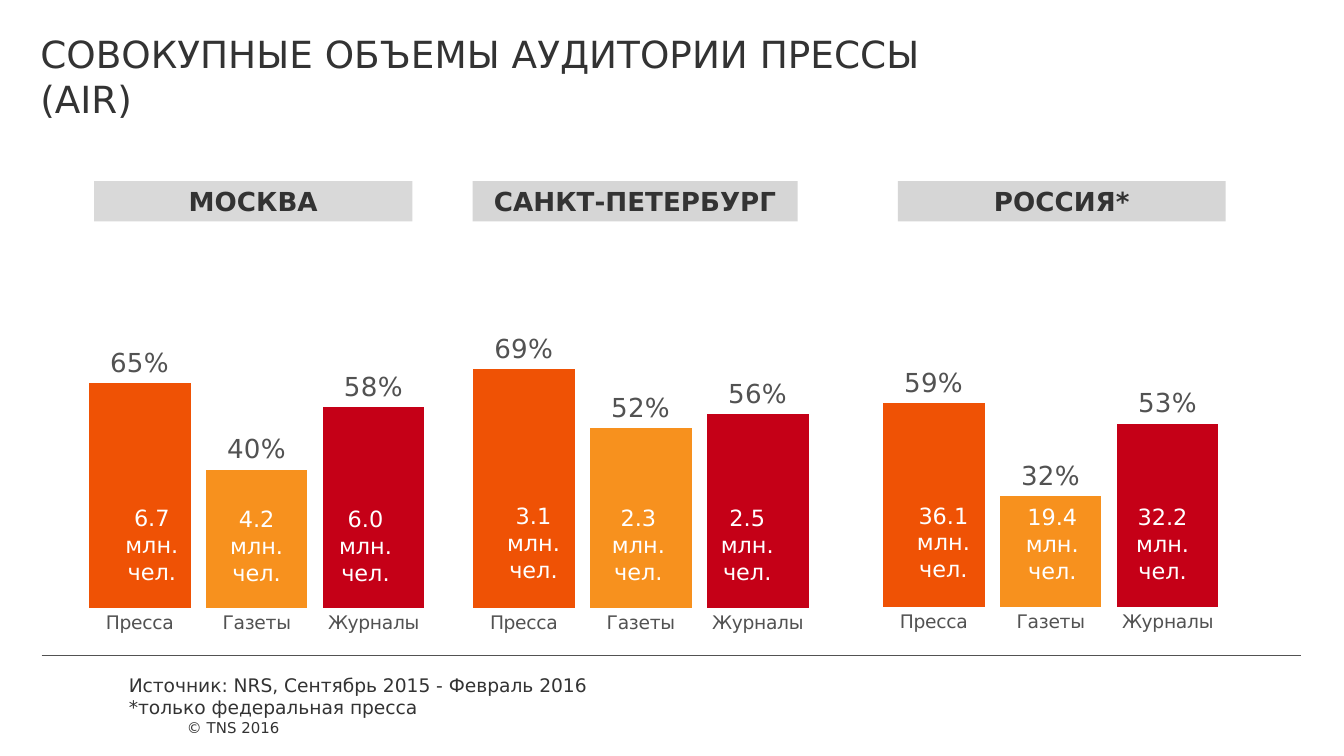
from dataclasses import dataclass

from lxml import etree
from pptx import Presentation
from pptx.chart.data import CategoryChartData
from pptx.dml.color import RGBColor
from pptx.enum.chart import XL_CHART_TYPE, XL_LABEL_POSITION, XL_TICK_LABEL_POSITION, XL_TICK_MARK
from pptx.enum.shapes import MSO_CONNECTOR, MSO_SHAPE
from pptx.enum.text import MSO_ANCHOR, PP_ALIGN
from pptx.oxml.ns import qn
from pptx.util import Pt

COLUMN = XL_CHART_TYPE.COLUMN_CLUSTERED
OUTSIDE_END = XL_LABEL_POSITION.OUTSIDE_END
NO_TICK = XL_TICK_MARK.NONE
NO_TICK_LABELS = XL_TICK_LABEL_POSITION.NONE
STRAIGHT = MSO_CONNECTOR.STRAIGHT
RECTANGLE = MSO_SHAPE.RECTANGLE
TOP, MIDDLE, BOTTOM = MSO_ANCHOR.TOP, MSO_ANCHOR.MIDDLE, MSO_ANCHOR.BOTTOM
LEFT, CENTER = PP_ALIGN.LEFT, PP_ALIGN.CENTER

FONT = "DejaVu Sans"
DARK, GREY, WHITE = "333333", "525252", "FFFFFF"
CATEGORIES = ("Пресса", "Газеты", "Журналы")
BAR_COLOURS = ("EF5205", "F7911E", "C50017")
DEFAULT_INSETS = (7.2, 3.6, 7.2, 3.6)


@dataclass
class Region:
    name: str
    header: tuple  # left, width, fill
    chart: tuple  # left, top
    overlap: int
    shares: tuple
    audiences: tuple
    label_lefts: tuple
    label_top: float


REGIONS = (
    Region("МОСКВА", (50.4, 170.6, "D9D9D9"), (39.6, 136.5), -57,
           (0.65, 0.4, 0.58), ("6.7", "4.2", "6.0"), (54.7, 110.9, 169.2), 266.4),
    Region("САНКТ-ПЕТЕРБУРГ", (253.2, 174.2, "D6D6D6"), (245.4, 136.5), -81,
           (0.69, 0.52, 0.56), ("3.1", "2.3", "2.5"), (259.2, 315.4, 373.7), 265.7),
    Region("РОССИЯ*", (481, 175.7, "D6D6D6"), (465, 135.9), -47,
           (0.59, 0.32, 0.53), ("36.1", "19.4", "32.2"), (478.8, 537.1, 596.2), 265.2),
)


def colour(hex_string):
    return RGBColor.from_string(hex_string)


def style_font(font, size, hex_string, bold=False):
    font.name = FONT
    font.size = Pt(size)
    font.bold = bold
    font.color.rgb = colour(hex_string)


def fill_text(shape, paragraphs, size, hex_string, align=LEFT, anchor=TOP,
              insets=DEFAULT_INSETS, bold=False, wrap=True):
    """Write each text as a paragraph; a newline inside it is a line break."""
    frame = shape.text_frame
    frame.word_wrap = wrap
    frame.vertical_anchor = anchor
    (frame.margin_left, frame.margin_top,
     frame.margin_right, frame.margin_bottom) = map(Pt, insets)
    for index, text in enumerate(paragraphs):
        paragraph = frame.add_paragraph() if index else frame.paragraphs[0]
        paragraph.alignment = align
        for line_index, line in enumerate(text.split("\n")):
            if line_index:
                paragraph.add_line_break()
            run = paragraph.add_run()
            run.text = line
            style_font(run.font, size, hex_string, bold)


def add_text(slide, box, paragraphs, size, hex_string, **options):
    shape = slide.shapes.add_textbox(*map(Pt, box))
    fill_text(shape, paragraphs, size, hex_string, **options)


def add_header(slide, name, left, width, fill):
    shape = slide.shapes.add_shape(RECTANGLE, Pt(left), Pt(97), Pt(width), Pt(21.6))
    shape.shadow.inherit = False
    shape.fill.solid()
    shape.fill.fore_color.rgb = colour(fill)
    shape.line.fill.background()
    fill_text(shape, [name], 14, DARK, align=CENTER, anchor=MIDDLE,
              insets=(2.2,) * 4, bold=True)


def add_rule(slide, left, right, top):
    connector = slide.shapes.add_connector(STRAIGHT, Pt(left), Pt(top), Pt(right), Pt(top))
    connector.line.color.rgb = colour(GREY)
    connector.line.width = Pt(0.75)
    etree.SubElement(connector._element.spPr, qn("a:effectLst"))


def add_column_chart(slide, left, top, shares, overlap):
    data = CategoryChartData(number_format="0%")
    data.categories = CATEGORIES
    data.add_series("Series 1", shares)
    chart = slide.shapes.add_chart(
        COLUMN, Pt(left), Pt(top), Pt(195.8), Pt(207.4), data).chart
    chart.has_legend = False
    chart.has_title = False
    style_font(chart.font, 16, GREY)

    # Axes
    category_axis = chart.category_axis
    category_axis.major_tick_mark = NO_TICK
    category_axis.format.line.fill.background()
    style_font(category_axis.tick_labels.font, 10, GREY)
    value_axis = chart.value_axis
    value_axis.minimum_scale = 0
    value_axis.maximum_scale = 1
    value_axis.has_major_gridlines = False
    value_axis.tick_label_position = NO_TICK_LABELS
    value_axis.visible = False

    # Columns and their shares
    plot = chart.plots[0]
    plot.vary_by_categories = False
    plot.gap_width = 15
    plot.overlap = overlap
    series = plot.series[0]
    for index, hex_string in enumerate(BAR_COLOURS):
        fill = series.points[index].format.fill
        fill.solid()
        fill.fore_color.rgb = colour(hex_string)
    labels = series.data_labels
    labels.show_value = True
    labels.number_format = "0%"
    labels.number_format_is_linked = False
    labels.position = OUTSIDE_END
    style_font(labels.font, 14, GREY)


def add_region(slide, region):
    add_header(slide, region.name, *region.header)
    add_column_chart(slide, *region.chart, region.shares, region.overlap)
    for index, (left, audience) in enumerate(zip(region.label_lefts, region.audiences)):
        top = region.label_top + (0.7 if index else 0)
        add_text(slide, (left, top, 53.3, 51.1), [f"{audience} млн. чел."],
                 12, WHITE, align=CENTER)


def main():
    presentation = Presentation()
    presentation.slide_width = Pt(720)
    presentation.slide_height = Pt(405)
    slide = presentation.slides.add_slide(presentation.slide_layouts[6])

    # Title
    add_text(slide, (0, 0, 720, 64), ["СОВОКУПНЫЕ ОБЪЕМЫ АУДИТОРИИ ПРЕССЫ \n(AIR)"],
             20, DARK, insets=(21.6, 16.6, 21.6, 0))

    # Regions
    for region in REGIONS:
        add_region(slide, region)

    # Footer
    add_rule(slide, 22.3, 697, 351.2)
    add_text(slide, (61.9, 358.6, 437.8, 28.8),
             ["Источник: NRS, Сентябрь 2015 - Февраль 2016", "*только федеральная пресса"],
             10, DARK, anchor=MIDDLE)
    add_text(slide, (93.1, 380.6, 65.5, 17.3), ["© TNS 2016"], 8, DARK,
             anchor=BOTTOM, wrap=False)

    presentation.save("out.pptx")


if __name__ == "__main__":
    main()
